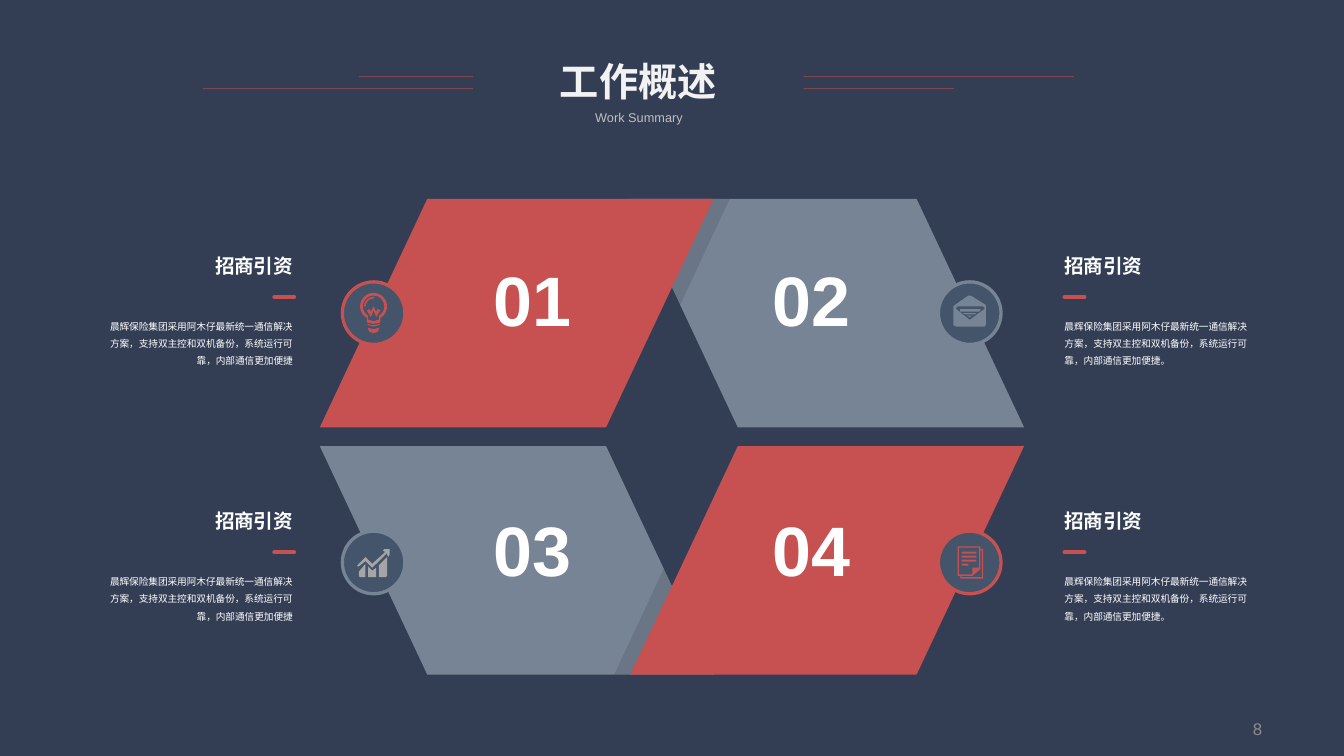
import math

from lxml import etree
from pptx import Presentation
from pptx.dml.color import RGBColor
from pptx.enum.shapes import MSO_CONNECTOR, MSO_SHAPE
from pptx.enum.text import MSO_ANCHOR, MSO_AUTO_SIZE, PP_ALIGN
from pptx.oxml.ns import qn
from pptx.util import Inches, Pt

LEFT, CENTER, RIGHT = PP_ALIGN.LEFT, PP_ALIGN.CENTER, PP_ALIGN.RIGHT
TOP, MIDDLE = MSO_ANCHOR.TOP, MSO_ANCHOR.MIDDLE
STRAIGHT = MSO_CONNECTOR.STRAIGHT
OVAL, DONUT = MSO_SHAPE.OVAL, MSO_SHAPE.DONUT

COLORS = {
    "navy": "333E55", "red": "C75050", "slate": "778495", "badge": "44546A",
    "silver": "A5A5A5", "white": "FFFFFF", "title": "F2F2F2",
    "subtitle": "BFBFBF", "number": "8C8C8C", "black": "000000",
}


def rgb(name):
    return RGBColor.from_string(COLORS[name])


def set_alpha(fill_parent, percent):
    clr = next(fill_parent.iter(qn("a:srgbClr")))
    etree.SubElement(clr, qn("a:alpha")).set("val", str(percent * 1000))


def write(shape, text, size=10, color="white", bold=False, align=LEFT,
          anchor=TOP, inset=True, wrap=True, spacing=None):
    tf = shape.text_frame
    tf.word_wrap = wrap
    tf.auto_size = MSO_AUTO_SIZE.NONE
    tf.vertical_anchor = anchor
    dx, dy = (Inches(0.1), Inches(0.05)) if inset else (0, 0)
    tf.margin_left = tf.margin_right = dx
    tf.margin_top = tf.margin_bottom = dy
    p = tf.paragraphs[0]
    p.alignment = align
    if spacing:
        p.line_spacing = spacing
    r = p.add_run()
    r.text = text
    r.font.name = "Arial"
    r.font.size = Pt(size)
    r.font.bold = bold
    r.font.color.rgb = rgb(color)


class Deck:
    def __init__(self, width, height):
        self.prs = Presentation()
        self.prs.slide_width, self.prs.slide_height = Inches(width), Inches(height)
        self.s = None

    def new_slide(self, background):
        self.s = self.prs.slides.add_slide(self.prs.slide_layouts[5])
        self.s.background.fill.solid()
        self.s.background.fill.fore_color.rgb = rgb(background)

    def title(self, text, x, y, w, h, **fmt):
        sp = self.s.shapes.title
        sp.left, sp.top, sp.width, sp.height = map(Inches, (x, y, w, h))
        write(sp, text, **fmt)

    def text(self, text, x, y, w, h, **fmt):
        write(self.s.shapes.add_textbox(*map(Inches, (x, y, w, h))), text, **fmt)

    def paint(self, sp, color, alpha=None):
        sp.shadow.inherit = False
        sp.fill.solid()
        sp.fill.fore_color.rgb = rgb(color)
        sp.line.fill.background()
        if alpha:
            set_alpha(sp._element.spPr, alpha)

    def round(self, kind, cx, cy, d, color):
        sp = self.s.shapes.add_shape(
            kind, *map(Inches, (cx - d / 2, cy - d / 2, d, d)))
        self.paint(sp, color)
        return sp

    def outline(self, contours, cx, cy, color, unit=1.0, flip=(1, 1), alpha=None):
        """Draw closed contours given around a centre, in units of inches."""
        paths = [[(Inches(x * unit * flip[0]), Inches(y * unit * flip[1]))
                  for x, y in contour] for contour in contours]
        builder = self.s.shapes.build_freeform(*paths[0][0], scale=1.0)
        for i, points in enumerate(paths):
            if i:
                builder.move_to(*points[0])
            builder.add_line_segments(points[1:], close=True)
        self.paint(builder.convert_to_shape(Inches(cx), Inches(cy)), color, alpha)

    def line(self, x1, x2, y, width, alpha=None, cap="flat"):
        c = self.s.shapes.add_connector(
            STRAIGHT, Inches(x1), Inches(y), Inches(x2), Inches(y))
        c.line.color.rgb = rgb("red")
        c.line.width = Pt(width)
        ln = c.line._get_or_add_ln()
        ln.set("cap", cap)
        if alpha:
            set_alpha(ln, alpha)
        etree.SubElement(c._element.spPr, qn("a:effectLst"))


def arc(r, start, end, cy=-5, steps=24):
    angles = [math.radians(start + (end - start) * i / steps) for i in range(steps + 1)]
    return [(r * math.cos(a), cy + r * math.sin(a)) for a in angles]


def bar(x1, y1, x2, y2):
    return [(x1, y1), (x2, y1), (x2, y2), (x1, y2)]


# Icon contours, in hundredths of an inch around the badge centre
BULB = [
    [(-5, 7)] + arc(10, 120, 420) + [(5, 7), (0, 8)],
    [(-4, 5)] + arc(8, 120, 420) + [(4, 5), (0, 6)],
    arc(7, 180, 275) + arc(5.8, 275, 180),
    [(-5, 8), (0, 9), (5, 8), (4, 9), (0, 10), (-4, 9)],
    [(-4, 11), (0, 12), (4, 11), (4, 12), (3, 14), (0, 15), (-3, 14), (-4, 12)],
    [(2, -1), (0, -5), (-2, -1), (-3, -3), (-5, -2), (-2, 3), (0, -2),
     (2, 3), (5, -2), (3, -3)],
]
ENVELOPE = [
    [(12, -6), (1, -13), (-1, -13), (-11, -6), (-12, -5), (-12, 9), (-10, 10),
     (11, 10), (12, 9), (12, -5)],
    [(11, -3), (0, 5), (-10, -3), (-10, -4), (-9, -5), (10, -5), (11, -4)],
    [(0, 3), (2, 2), (-2, 2)],
    [(-3, 1), (4, 1), (5, 0), (-5, 0)],
    [(-7, -2), (-7, -1), (7, -1), (8, -2), (8, -3), (-7, -3)],
]
GROWTH = [
    [(-4, 3), (-4, 11), (2, 11), (2, 4), (-1, 6)],
    [(-11, 10), (-10, 11), (-6, 11), (-6, 1), (-11, 7)],
    [(8, -10), (7, -9), (8, -8), (9, -8), (-1, 1), (-6, -4), (-12, 2), (-12, 3),
     (-11, 3), (-6, -1), (-1, 4), (10, -7), (10, -6), (11, -4), (12, -6), (12, -10)],
    [(4, 2), (4, 11), (9, 11), (10, 10), (10, -4), (5, 1)],
]
DOCUMENT = [
    [(8, -10), (8, -12), (-9, -12), (-9, 10), (-7, 10), (-7, 12), (10, 12), (10, -10)],
    [(-8, 9), (-8, -11), (7, -11), (7, 4), (2, 4), (2, 9)],
    [(9, 11), (-6, 11), (-6, 10), (2, 10), (8, 5), (8, -9), (9, -9)],
    bar(-6, -8, 5, -6.6), bar(-6, -5, 5, -3.6), bar(-6, -2, 5, -0.6),
    bar(-6, 1, -1, 2.4),
]

# Panel and fold shadow of the upper left quarter, around the hexagon centre
CX, CY = 5, 3.25
PANEL = [(-1.82, -1.77), (0.31, -1.77), (-0.49, -0.07), (-2.62, -0.07)]
FOLD = [(0.43, -1.77), (0.06, -0.98), (0, -1.11), (0.31, -1.77)]

BODY = "晨辉保险集团采用阿木仔最新统一通信解决方案，支持双主控和双机备份，系统运行可靠，内部通信更加便捷"

# number, column, row, colour, icon, icon colour
QUARTERS = [
    ("02", 1, 0, "slate", ENVELOPE, "slate"),
    ("03", 0, 1, "slate", GROWTH, "silver"),
    ("01", 0, 0, "red", BULB, "red"),
    ("04", 1, 1, "red", DOCUMENT, "red"),
]


def main():
    deck = Deck(10, 5.625)
    deck.new_slide("navy")

    # Heading with thin rules on both sides
    deck.title("工作概述", 3.63, 0.38, 2.24, 0.45, size=21, color="title",
               bold=True, align=CENTER)
    deck.text("Work Summary", 3.89, 0.77, 1.73, 0.21, size=6.8,
              color="subtitle", align=CENTER)
    for x1, x2, y in [(2.67, 3.52, 0.57), (1.51, 3.52, 0.66),
                      (5.98, 7.99, 0.57), (5.98, 7.1, 0.66)]:
        deck.line(x1, x2, y, 0.5, alpha=50)

    # Panels and the shadows where they fold
    for _, col, row, color, _, _ in QUARTERS:
        deck.outline([PANEL], CX, CY, color, flip=(1 - 2 * col, 1 - 2 * row))
    for sign in (1, -1):
        deck.outline([FOLD], CX, CY, "black", flip=(sign, sign), alpha=10)

    for number, col, row, color, icon, icon_color in QUARTERS:
        # Icon badge
        cx, cy = 2.78 + 4.435 * col, 2.33 + 1.855 * row
        deck.round(OVAL, cx, cy, 0.47, "badge")
        ring = deck.round(DONUT, cx, cy, 0.49, color)
        ring.adjustments[0] = 0.05
        deck.outline(icon, cx, cy, icon_color, unit=0.01)

        # Panel number
        deck.text(number, 3.23 + 2.08 * col, 1.91 + 1.86 * row, 1.46, 0.63,
                  size=37.5, bold=True, align=CENTER, inset=False)

        # Side caption
        align, dy = (LEFT if col else RIGHT), 1.9 * row
        rule_x = 7.92 if col else 2.04
        deck.line(rule_x, rule_x + 0.15, 2.21 + dy, 2, cap="rnd")
        deck.text("招商引资", 7.92 if col else 1.59, 1.89 + dy, 0.59, 0.18,
                  size=10.5, bold=True, align=align, inset=False, wrap=False)
        deck.text(BODY + "。" * col, 7.92 if col else 0.77, 2.34 + dy, 1.41, 0.38,
                  size=5.2, align=align, inset=False, spacing=1.5)

    # Page number
    deck.text("8", 9.02, 5.22, 0.47, 0.4, size=9, color="number",
              align=RIGHT, anchor=MIDDLE)
    deck.prs.save("out.pptx")


if __name__ == "__main__":
    main()
